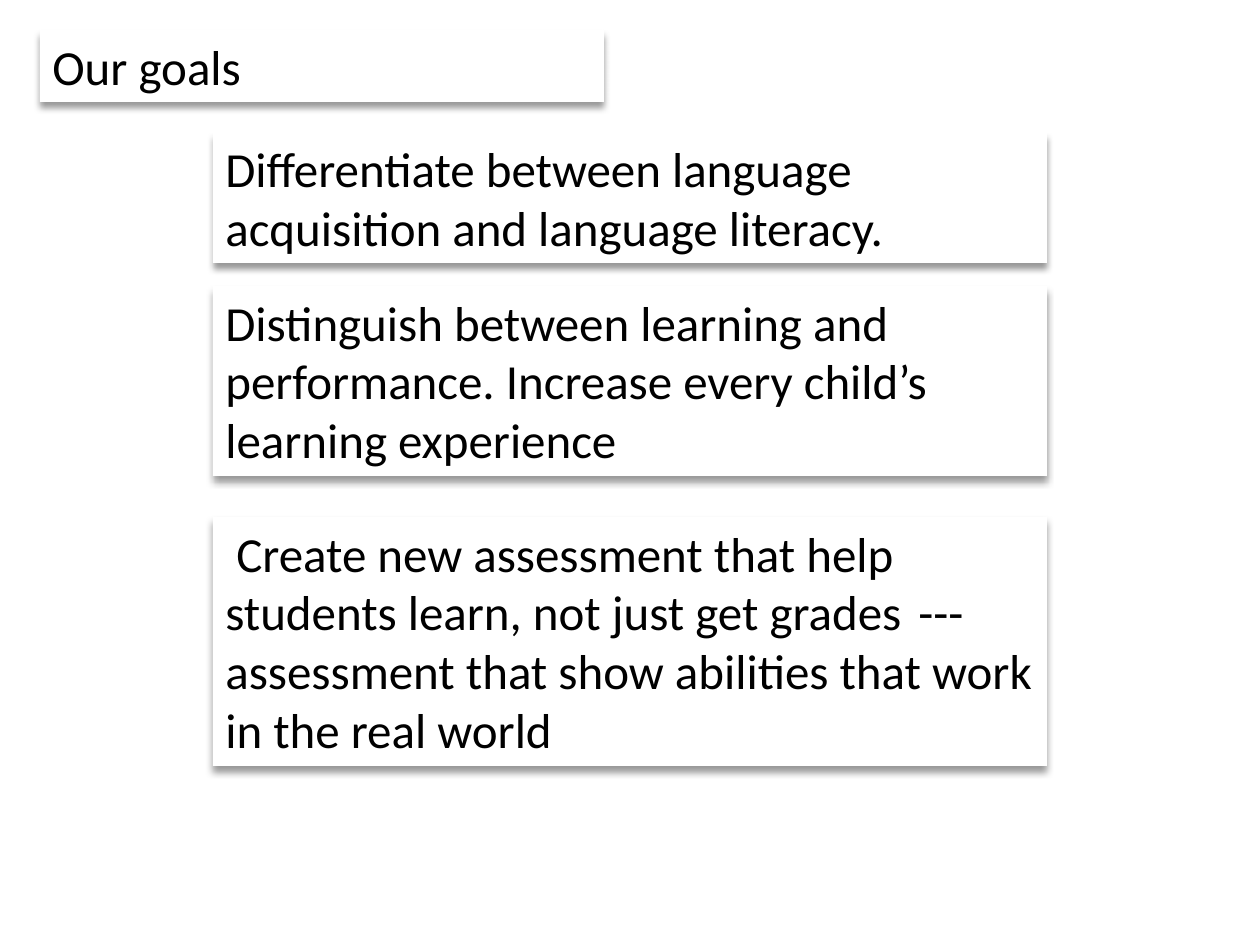
from lxml import etree
from pptx import Presentation
from pptx import util as u
from pptx.dml.color import RGBColor
from pptx.enum import shapes, text
from pptx.oxml.ns import qn

PX = u.Inches(1) / 126
THEME = {
    "font": "Calibri",
    "size": u.Pt(28),
    "ink": RGBColor(0, 0, 0),
    "card": RGBColor(255, 255, 255),
    "shadow": "000000",
}
LINE_HEIGHT, PADDING = 59, 13


def px(length):
    return u.Emu(round(length * PX))


def add_card(page, words, *, left, top, width, lines, indent=0, tab=None):
    """Add a white card with a soft shadow below, sized by its text lines."""
    box = page.shapes.add_shape(
        shapes.MSO_SHAPE.RECTANGLE,
        px(left), px(top), px(width), px(PADDING + LINE_HEIGHT * lines))
    box.fill.solid()
    box.fill.fore_color.rgb = THEME["card"]
    box.line.fill.background()

    # Shadow
    box.shadow.inherit = False
    effects = box._element.spPr.find(qn("a:effectLst"))
    shadow = etree.SubElement(
        effects, qn("a:outerShdw"), blurRad=str(u.Pt(4)), dist=str(u.Pt(3)),
        dir="5400000", algn="t", rotWithShape="0")
    color = etree.SubElement(shadow, qn("a:srgbClr"), val=THEME["shadow"])
    etree.SubElement(color, qn("a:alpha"), val="40000")

    # Text
    frame = box.text_frame
    frame.word_wrap = True
    frame.auto_size = text.MSO_AUTO_SIZE.SHAPE_TO_FIT_TEXT
    frame.vertical_anchor = text.MSO_ANCHOR.TOP
    para = frame.paragraphs[0]
    para.alignment = text.PP_ALIGN.LEFT
    settings = para._p.get_or_add_pPr()
    if indent:
        settings.set("marL", "0")
        settings.set("indent", str(px(indent)))
    if tab:
        stops = etree.SubElement(settings, qn("a:tabLst"))
        etree.SubElement(stops, qn("a:tab"), pos=str(px(tab)), algn="l")
    span = para.add_run()
    span.text = words
    span.font.name = THEME["font"]
    span.font.size = THEME["size"]
    span.font.color.rgb = THEME["ink"]


deck = Presentation()
deck.slide_width, deck.slide_height = px(1260), px(945)
page = deck.slides.add_slide(deck.slide_layouts[6])

# Heading
add_card(page, "Our goals", left=40, top=30, width=564, lines=1)

# Goals: top, line count, wording, paragraph format
goals = [
    (132, 2, "Differentiate between language acquisition and language literacy.", {}),
    (286, 3, "Distinguish between learning and performance. "
             "Increase every child’s learning experience", {}),
    (517, 4, "Create new assessment that help students learn, not just get grades\t"
             "---assessment that show abilities that work in the real world",
     {"indent": 11, "tab": 709}),
]
for top, lines, words, layout in goals:
    add_card(page, words, left=213, top=top, width=834, lines=lines, **layout)

deck.save("out.pptx")
